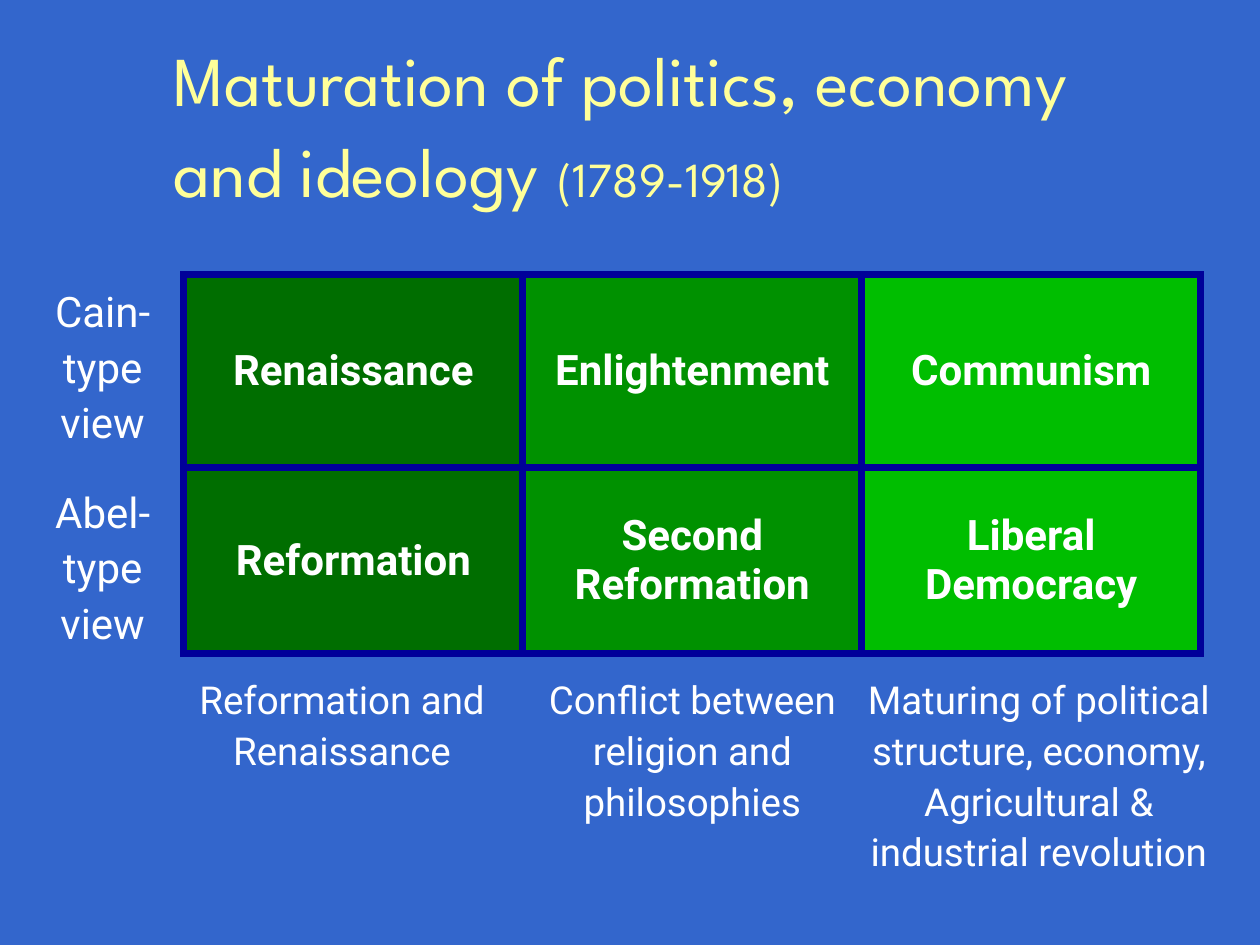
from lxml.etree import SubElement
from pptx import Presentation
from pptx.dml.color import RGBColor
from pptx.enum.text import MSO_ANCHOR, PP_ALIGN
from pptx.oxml.ns import qn
from pptx.util import Inches, Pt

WIDTH, HEIGHT = 10, 7.5
BACKGROUND, BORDER, WHITE, YELLOW = "3366CC", "000099", "FFFFFF", "FFFF99"
TITLE = [
    [("Maturation of politics, economy", 40)],
    [("and ideology", 40), (" ", 44), ("(1789-1918)", 28)],
]
VIEWS = [
    ("Cain-type view", ["Renaissance", "Enlightenment", "Communism"]),
    ("Abel-type view", ["Reformation", "Second Reformation", "Liberal Democracy"]),
]
ERAS = [
    ("006E00", ["Reformation and Renaissance"], 1.28, 2.87),
    ("009100", ["Conflict between religion and philosophies"], 4.05, 2.89),
    ("00BE00", ["Maturing of political structure, economy,",
                "Agricultural & industrial revolution"], 6.67, 3.15),
]
GRID_LEFT, GRID_TOP, COLUMN = 1.46, 2.18, 2.69
ROWS = [1.53, 1.48]
VIEW_TOPS = [GRID_TOP, 3.77]
ERA_TOP = 5.28


def color(value):
    return RGBColor.from_string(value)


def style(run, size, font="Roboto", ink=WHITE, bold=False):
    run.font.size, run.font.name, run.font.bold = Pt(size), font, bold
    run.font.color.rgb = color(ink)


def add_frame(slide, left, top, width, height):
    frame = slide.shapes.add_textbox(*map(Inches, (left, top, width, height))).text_frame
    frame.word_wrap = True
    return frame


def add_label(slide, lines, size, *place):
    frame = add_frame(slide, *place)
    frame.text = "\n".join(lines)
    for paragraph in frame.paragraphs:
        paragraph.alignment, paragraph.line_spacing = PP_ALIGN.CENTER, 1.1
        style(paragraph.runs[0], size)


def add_title(slide):
    frame = add_frame(slide, 0, 0.15, WIDTH, 1.68)
    frame.margin_left = Inches(1.38)
    frame.vertical_anchor = MSO_ANCHOR.MIDDLE
    for index, line in enumerate(TITLE):
        paragraph = frame.add_paragraph() if index else frame.paragraphs[0]
        for words, size in line:
            run = paragraph.add_run()
            run.text = words
            style(run, size, "League Spartan", YELLOW)


def outline(cell):
    properties = cell._tc.get_or_add_tcPr()
    for position, side in enumerate(("a:lnL", "a:lnR", "a:lnT", "a:lnB")):
        line = SubElement(properties, qn(side), w=str(Pt(4.5)))
        SubElement(SubElement(line, qn("a:solidFill")), qn("a:srgbClr"), val=BORDER)
        properties.insert(position, line)


def add_grid(slide):
    grid = slide.shapes.add_table(
        len(VIEWS), len(ERAS), Inches(GRID_LEFT), Inches(GRID_TOP),
        Inches(COLUMN * len(ERAS)), Inches(sum(ROWS))).table
    for row, height in zip(grid.rows, ROWS):
        row.height = Inches(height)
    for r, (_, movements) in enumerate(VIEWS):
        for c, movement in enumerate(movements):
            cell = grid.cell(r, c)
            cell.text = movement
            cell.vertical_anchor = MSO_ANCHOR.MIDDLE
            cell.fill.solid()
            cell.fill.fore_color.rgb = color(ERAS[c][0])
            paragraph = cell.text_frame.paragraphs[0]
            paragraph.alignment = PP_ALIGN.CENTER
            style(paragraph.runs[0], 24, bold=True)
            outline(cell)


def main():
    """Build the slide on the maturation of politics, economy and ideology."""
    deck = Presentation()
    deck.slide_width, deck.slide_height = Inches(WIDTH), Inches(HEIGHT)
    slide = deck.slides.add_slide(deck.slide_layouts[6])
    slide.background.fill.solid()
    slide.background.fill.fore_color.rgb = color(BACKGROUND)
    add_title(slide)
    add_grid(slide)
    for (view, _), top in zip(VIEWS, VIEW_TOPS):
        add_label(slide, [view], 24, 0.26, top, 1.11, 1.42)
    for _, lines, left, width in ERAS:
        add_label(slide, lines, 22, left, ERA_TOP, width, 0.4 * len(lines) + 0.91)
    deck.save("out.pptx")


if __name__ == "__main__":
    main()
